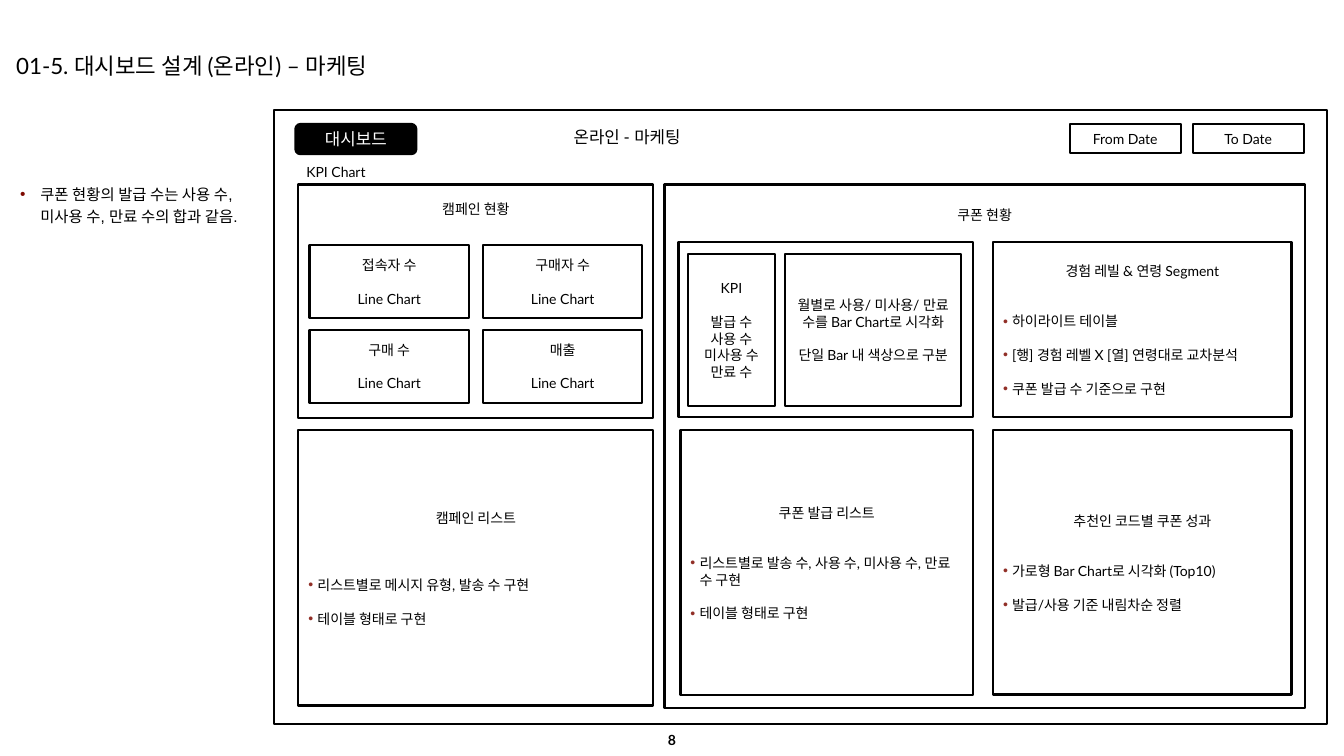
from dataclasses import dataclass

from lxml.etree import SubElement
from pptx import Presentation
from pptx.dml.color import RGBColor
from pptx.enum.shapes import MSO_SHAPE
from pptx.enum.text import MSO_ANCHOR, MSO_AUTO_SIZE, PP_ALIGN
from pptx.oxml.ns import qn
from pptx.util import Pt

EMU_PER_PX = 9144  # 100 px to the inch


@dataclass(frozen=True)
class Theme:
    font: str = "Lato"
    note_font: str = "Arial"
    black: str = "000000"
    white: str = "FFFFFF"
    card_bullet: str = "912F27"
    note_bullet: str = "7D0900"
    title_size: int = 16
    heading_size: int = 12
    note_size: int = 11
    body_size: int = 10
    border: float = 1.5
    blank: int = 12  # height of one body line, in points


THEME = Theme()


def px(value):
    return int(value * EMU_PER_PX)


def rgb(value):
    return RGBColor.from_string(value)


def set_all(target, formats):
    for name, value in formats.items():
        setattr(target, name, value)


def add_bullet(paragraph, indent, color):
    properties = paragraph._p.get_or_add_pPr()
    properties.set("marL", str(px(indent)))
    properties.set("indent", str(-px(indent)))
    bullet_color = SubElement(properties, qn("a:buClr"))
    SubElement(bullet_color, qn("a:srgbClr")).set("val", color)
    SubElement(properties, qn("a:buFont")).set("typeface", "Arial")
    SubElement(properties, qn("a:buChar")).set("char", "•")


def write(paragraph, text, size=THEME.body_size, color=THEME.black,
          font=THEME.font, bold=False, **formats):
    set_all(paragraph, formats)
    run = paragraph.add_run()
    run.text = text
    set_all(run.font, {"name": font, "size": Pt(size), "bold": bold})
    run.font.color.rgb = rgb(color)


def next_paragraph(frame, index):
    return frame.add_paragraph() if index else frame.paragraphs[0]


def add_box(slide, place, fill=THEME.white, kind=MSO_SHAPE.RECTANGLE):
    """Outlined box; returns its text frame."""
    shape = slide.shapes.add_shape(kind, *map(px, place))
    shape.shadow.inherit = False
    shape.fill.solid()
    shape.fill.fore_color.rgb = rgb(fill)
    shape.line.color.rgb = rgb(THEME.black)
    shape.line.width = Pt(THEME.border)
    set_all(shape.text_frame, {"word_wrap": True, "vertical_anchor": MSO_ANCHOR.MIDDLE})
    return shape.text_frame


def add_label(slide, place, text, anchor=MSO_ANCHOR.TOP, **formats):
    frame = slide.shapes.add_textbox(*map(px, place)).text_frame
    set_all(frame, {"word_wrap": True, "vertical_anchor": anchor})
    write(frame.paragraphs[0], text, **formats)
    return frame


def add_panel(slide, place, heading, top):
    """Large box with its heading near the top edge."""
    frame = add_box(slide, place)
    set_all(frame, {"vertical_anchor": MSO_ANCHOR.TOP, "margin_top": px(top)})
    write(frame.paragraphs[0], heading, alignment=PP_ALIGN.CENTER)


def add_tile(slide, place, groups):
    """Box of centred lines, with one blank line's height between groups."""
    frame = add_box(slide, place)
    lines = [(text, group > 0 and first == 0)
             for group, texts in enumerate(groups)
             for first, text in enumerate(texts)]
    for index, (text, starts_group) in enumerate(lines):
        write(next_paragraph(frame, index), text, alignment=PP_ALIGN.CENTER,
              space_before=Pt(THEME.blank if starts_group else 0))


def add_card(slide, place, heading, bullets, blanks):
    """Box with a centred heading, a gap and a bullet list."""
    frame = add_box(slide, place)
    write(frame.paragraphs[0], heading, alignment=PP_ALIGN.CENTER)
    for index, text in enumerate(bullets):
        paragraph = frame.add_paragraph()
        add_bullet(paragraph, 9, THEME.card_bullet)
        gap = THEME.blank * (1 if index else blanks)
        write(paragraph, text, alignment=PP_ALIGN.LEFT, space_before=Pt(gap))


def add_title(slide, place, text):
    title = slide.shapes.title
    set_all(title, dict(zip(("left", "top", "width", "height"), map(px, place))))
    set_all(title.text_frame, {"word_wrap": True, "vertical_anchor": MSO_ANCHOR.TOP,
                               "auto_size": MSO_AUTO_SIZE.NONE})
    write(title.text_frame.paragraphs[0], text, size=THEME.title_size,
          alignment=PP_ALIGN.LEFT, line_spacing=0.9)


def add_note(slide, place, text):
    frame = slide.shapes.add_textbox(*map(px, place)).text_frame
    set_all(frame, {"word_wrap": True, "margin_left": px(8), "margin_right": px(8),
                    "margin_top": px(39), "margin_bottom": px(8)})
    add_bullet(frame.paragraphs[0], 20, THEME.note_bullet)
    write(frame.paragraphs[0], text, size=THEME.note_size, font=THEME.note_font,
          line_spacing=1.2, space_after=Pt(6))


def main():
    presentation = Presentation()
    set_all(presentation, {"slide_width": px(1333), "slide_height": px(750)})
    slide = presentation.slides.add_slide(presentation.slide_layouts[5])

    # Title, side note and page number
    add_title(slide, (6, 50, 407, 48), "01-5. 대시보드 설계 (온라인) – 마케팅")
    add_note(slide, (12, 142, 260, 158),
             "쿠폰 현황의 발급 수는 사용 수, 미사용 수, 만료 수의 합과 같음.")
    add_label(slide, (640, 723, 53, 23), "8", MSO_ANCHOR.MIDDLE,
              bold=True, alignment=PP_ALIGN.CENTER)

    # Dashboard frame and header
    add_box(slide, (272, 109, 1044, 609))
    badge = add_box(slide, (293, 123, 120, 30), THEME.black, MSO_SHAPE.ROUNDED_RECTANGLE)
    write(badge.paragraphs[0], "대시보드", size=THEME.heading_size,
          color=THEME.white, alignment=PP_ALIGN.CENTER)
    add_label(slide, (488, 121, 268, 30), "온라인 - 마케팅",
              size=THEME.heading_size, alignment=PP_ALIGN.CENTER)
    add_label(slide, (294, 157, 268, 27), "KPI Chart")
    for index, text in enumerate(("From Date", "To Date")):
        add_tile(slide, (1061 + 122 * index, 123, 110, 29), [[text]])

    # Campaign status with its four line charts
    add_panel(slide, (296, 183, 352, 232), "캠페인 현황", 16)
    for index, metric in enumerate(("접속자 수", "구매자 수", "구매 수", "매출")):
        row, column = divmod(index, 2)
        add_tile(slide, (307 + 172 * column, 243 + 84 * row, 158, 73),
                 [[metric], ["Line Chart"]])

    # Coupon status with its KPI list and bar chart
    add_panel(slide, (659, 183, 635, 519), "쿠폰 현황", 22)
    add_box(slide, (673, 240, 292, 174))
    add_tile(slide, (682, 252, 87, 151),
             [["KPI"], ["발급 수", "사용 수", "미사용 수", "만료 수"]])
    add_tile(slide, (779, 252, 174, 151),
             [["월별로 사용/ 미사용/ 만료 수를 Bar Chart로 시각화"],
              ["단일 Bar 내 색상으로 구분"]])

    # Cards with bullet lists
    cards = (
        ((985, 240, 296, 174), "경험 레빌 & 연령 Segment", 2,
         ("하이라이트 테이블", "[행] 경험 레벨 X [열] 연령대로 교차분석",
          "쿠폰 발급 수 기준으로 구현")),
        ((296, 427, 352, 273), "캠페인 리스트", 3,
         ("리스트별로 메시지 유형, 발송 수 구현", "테이블 형태로 구현")),
        ((675, 427, 290, 263), "쿠폰 발급 리스트", 2,
         ("리스트별로 발송 수, 사용 수, 미사용 수, 만료 수 구현", "테이블 형태로 구현")),
        ((985, 427, 296, 262), "추천인 코드별 쿠폰 성과", 2,
         ("가로형 Bar Chart로 시각화 (Top10)", "발급/사용 기준 내림차순 정렬")),
    )
    for place, heading, blanks, bullets in cards:
        add_card(slide, place, heading, bullets, blanks)

    presentation.save("out.pptx")


if __name__ == "__main__":
    main()
